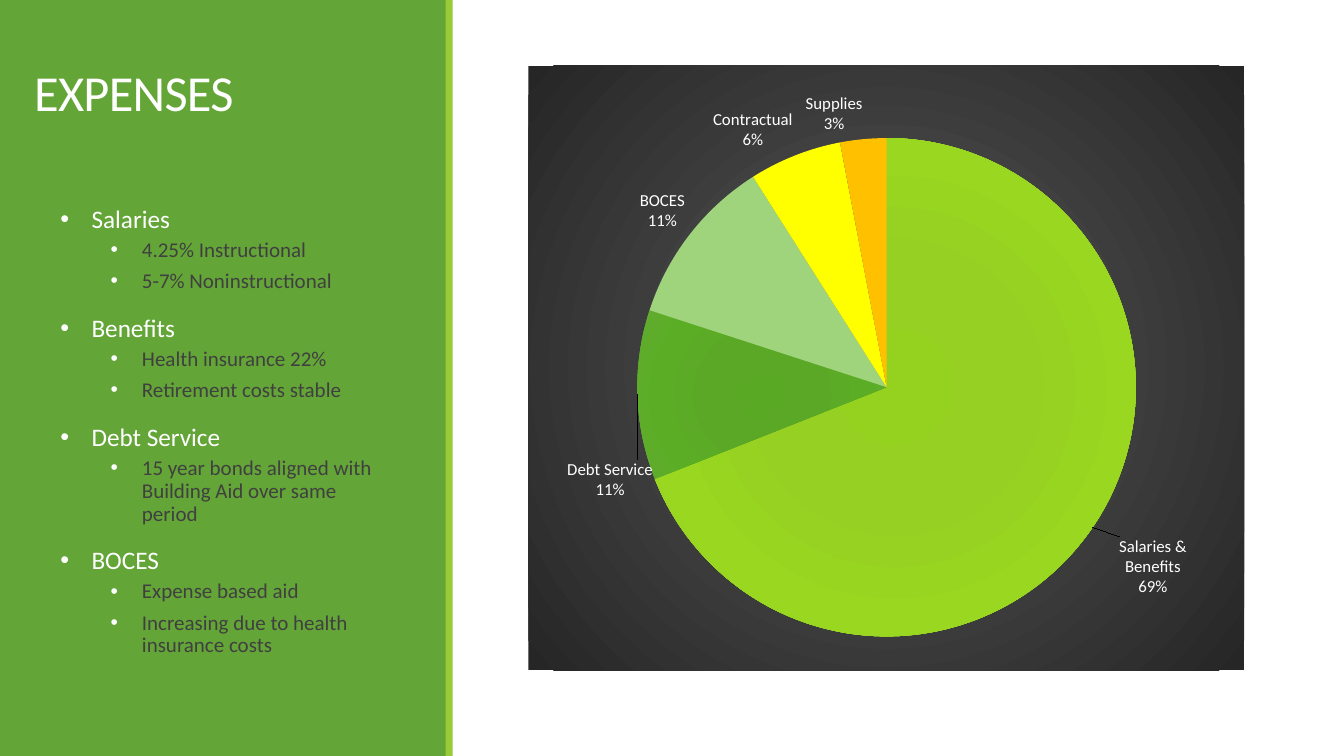
from copy import deepcopy
from pptx import Presentation
from pptx.chart.data import CategoryChartData as ChartData
from pptx.dml.color import RGBColor
from pptx.enum.chart import XL_CHART_TYPE as ChartKind, XL_LABEL_POSITION as LabelSpot
from pptx.enum.shapes import MSO_SHAPE as Preset
from pptx.oxml import parse_xml
from pptx.oxml.ns import nsdecls
from pptx.util import Inches, Pt

WHITE = RGBColor(0xFF, 0xFF, 0xFF)
BLACK = RGBColor(0x00, 0x00, 0x00)
GREY = RGBColor(0x40, 0x40, 0x40)
GREEN = RGBColor(0x63, 0xA5, 0x37)
LIME = RGBColor(0x99, 0xCB, 0x38)
PALE_GREEN = RGBColor(0x9F, 0xD4, 0x7D)
YELLOW = RGBColor(0xFF, 0xFF, 0x00)
ORANGE = RGBColor(0xFF, 0xC0, 0x00)
CHARCOAL = {0: RGBColor(0x59, 0x59, 0x59), 100: RGBColor(0x26, 0x26, 0x26)}
LIME_GLOW = {0: RGBColor(0x95, 0xD2, 0x20), 34: RGBColor(0x96, 0xD0, 0x23),
             70: RGBColor(0x99, 0xD7, 0x20), 100: RGBColor(0x9B, 0xD2, 0x31)}
GREEN_GLOW = {0: RGBColor(0x59, 0xA9, 0x24), 34: RGBColor(0x5B, 0xA8, 0x27),
              70: RGBColor(0x5B, 0xAD, 0x25), 100: RGBColor(0x62, 0xAB, 0x31)}
FONT = "Calibri"


def radial_fill(stops, focus):
    marks = "".join(f'<a:gs pos="{place * 1000}"><a:srgbClr val="{color}"/></a:gs>'
                    for place, color in stops.items())
    sides = " ".join(f'{side}="{focus * 1000}"' for side in "ltrb")
    return parse_xml(f'<a:gradFill {nsdecls("a")}><a:gsLst>{marks}</a:gsLst>'
                     f'<a:path path="circle"><a:fillToRect {sides}/></a:path></a:gradFill>')


def manual_layout(values):
    parts = "".join(f'<c:{name} val="{value}"/>' for name, value in values.items())
    return parse_xml(f'<c:layout {nsdecls("c")}><c:manualLayout>{parts}'
                     '</c:manualLayout></c:layout>')


deck = Presentation()
deck.slide_width, deck.slide_height = Inches(13.33), Inches(7.5)
page = deck.slides.add_slide(deck.slide_layouts[6])

for left, width, color in ((0, 4.43, GREEN), (4.42, 0.07, LIME)):
    panel = page.shapes.add_shape(Preset.RECTANGLE, Inches(left), 0,
                                  Inches(width), deck.slide_height)
    panel.shadow.inherit = False
    panel.fill.solid()
    panel.fill.fore_color.rgb = color
    panel.line.fill.background()

title = page.shapes.add_textbox(Inches(0.24), Inches(0.65), Inches(4.01), Inches(2.5))
title.text_frame.word_wrap = True
para = title.text_frame.paragraphs[0]
para.line_spacing = 0.85
span = para.add_run()
span.text = "EXPENSES"
span.font.name, span.font.size, span.font.color.rgb = FONT, Pt(36), WHITE
span.font._element.set("spc", "-50")

topics = {
    "Salaries": ["4.25% Instructional", "5-7% Noninstructional"],
    "Benefits": ["Health insurance 22%", "Retirement costs stable"],
    "Debt Service": ["15 year bonds aligned with Building Aid over same period"],
    "BOCES": ["Expense based aid", "Increasing due to health insurance costs"],
}
levels = [
    {"size": 18, "color": WHITE, "indent": 0.31, "before": 12, "after": 2},
    {"size": 15, "color": GREY, "indent": 0.81, "before": 2, "after": 4},
]
outline = [(level, text) for topic, details in topics.items()
           for level, text in [(0, topic)] + [(1, detail) for detail in details]]

body = page.shapes.add_textbox(Inches(0.5), Inches(2), Inches(3.5), Inches(4.9))
body.text_frame.word_wrap = True
for index, (level, text) in enumerate(outline):
    look = levels[level]
    para = body.text_frame.add_paragraph() if index else body.text_frame.paragraphs[0]
    para.level = level
    settings = {"line_spacing": 0.9, "space_before": Pt(look["before"] if index else 0),
                "space_after": Pt(look["after"])}
    for name, value in settings.items():
        setattr(para, name, value)
    format_xml = para._p.get_or_add_pPr()
    format_xml.set("marL", str(Inches(look["indent"])))
    format_xml.set("indent", str(Inches(-0.31)))
    for bullet in (f'<a:buClr {nsdecls("a")}><a:srgbClr val="{WHITE}"/></a:buClr>',
                   f'<a:buFont {nsdecls("a")} typeface="Arial"/>',
                   f'<a:buChar {nsdecls("a")} char="•"/>'):
        format_xml.append(parse_xml(bullet))
    span = para.add_run()
    span.text = text
    span.font.name, span.font.size = FONT, Pt(look["size"])
    span.font.color.rgb = look["color"]

expenses = [
    ("Salaries & Benefits", 69, LIME_GLOW),
    ("Debt Service", 11, GREEN_GLOW),
    ("BOCES", 11, PALE_GREEN),
    ("Contractual", 6, YELLOW),
    ("Supplies", 3, ORANGE),
]
data = ChartData()
data.categories = [name for name, share, paint in expenses]
data.add_series("Series 1", [share for name, share, paint in expenses])
chart = page.shapes.add_chart(ChartKind.PIE, Inches(5.24), Inches(0.65),
                              Inches(7.1), Inches(6), data).chart
chart.has_title = False
chart.has_legend = False
chart.font.name, chart.font.size, chart.font.color.rgb = FONT, Pt(10), BLACK
backdrop = parse_xml(f'<c:spPr {nsdecls("c", "a")}><a:ln><a:noFill/></a:ln></c:spPr>')
backdrop.insert(0, radial_fill(CHARCOAL, 50))
chart._chartSpace.xpath("c:chart")[0].addnext(backdrop)

plot_area = chart._chartSpace.xpath("c:chart/c:plotArea")[0]
for layout in plot_area.xpath("c:layout"):
    plot_area.remove(layout)
plot_area.insert(0, manual_layout({"layoutTarget": "inner", "xMode": "edge", "yMode": "edge",
                                   "x": 0.152, "y": 0.12, "w": 0.697, "h": 0.824}))

plot = chart.plots[0]
plot.vary_by_categories = True
pie = plot.series[0]
for index, (name, share, paint) in enumerate(expenses):
    wedge = pie.points[index].format
    wedge.line.fill.background()
    wedge.fill.solid()
    if isinstance(paint, dict):
        solid = pie._element.xpath(f'c:dPt[c:idx/@val="{index}"]/c:spPr/a:solidFill')[0]
        solid.getparent().replace(solid, radial_fill(paint, 100))
    else:
        wedge.fill.fore_color.rgb = paint

labels = pie.data_labels
for name, value in {"show_value": False, "show_category_name": True,
                    "show_percentage": True, "position": LabelSpot.OUTSIDE_END}.items():
    setattr(labels, name, value)
labels.font.name, labels.font.size, labels.font.color.rgb = FONT, Pt(12), WHITE
label_xml = labels._element
for mark in label_xml.xpath("c:showBubbleSize | c:showPercent")[-1:]:
    mark.addnext(parse_xml(f'<c:separator {nsdecls("c")}>\n</c:separator>'))

shared = [part for part in label_xml if not part.tag.endswith("showLeaderLines")]
for index, (across, down) in enumerate([(0.03, 0.01), (0.03, 0.14)]):
    moved = parse_xml(f'<c:dLbl {nsdecls("c")}><c:idx val="{index}"/></c:dLbl>')
    moved.append(manual_layout({"x": across, "y": down}))
    moved.extend(deepcopy(shared))
    label_xml.insert(index, moved)

deck.save("out.pptx")
